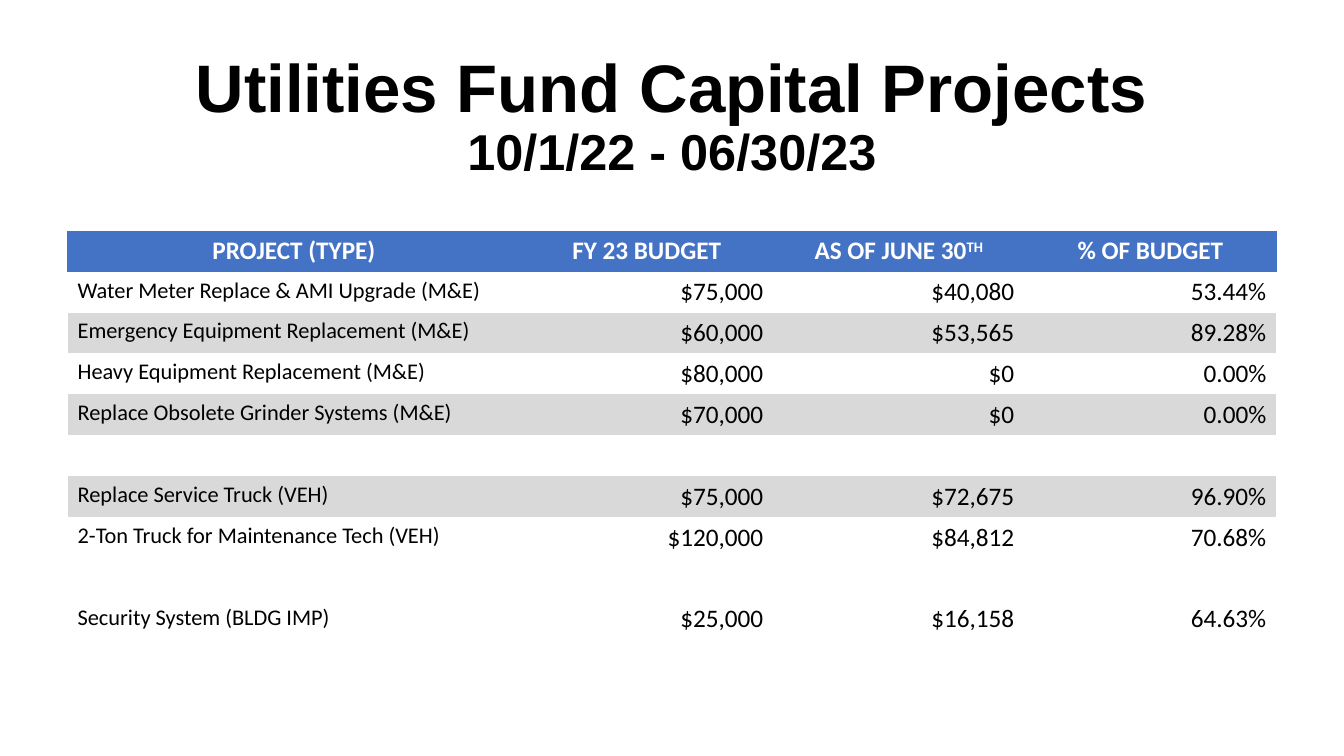
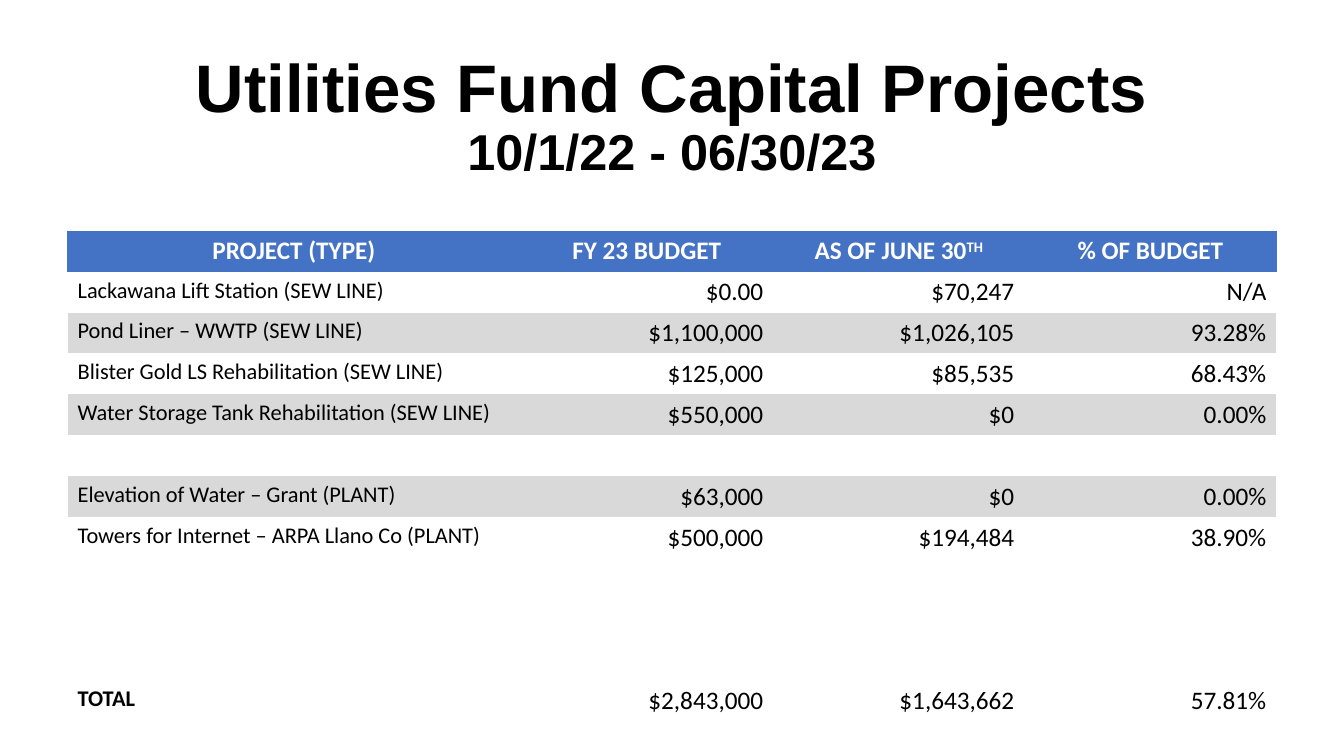
from lxml import etree
from pptx import Presentation
from pptx.dml.color import RGBColor
from pptx.enum.text import MSO_ANCHOR, PP_ALIGN
from pptx.oxml.ns import qn
from pptx.util import Inches, Pt

LEFT, CENTER, RIGHT = PP_ALIGN.LEFT, PP_ALIGN.CENTER, PP_ALIGN.RIGHT
MIDDLE = MSO_ANCHOR.MIDDLE
BLACK, WHITE, BLUE, GRAY = "000000", "FFFFFF", "4472C4", "D9D9D9"
PLAIN_TABLE_STYLE = "{2D5ABB26-0587-4C30-8999-92F81FD0307C}"
MARGIN, CONTENT_WIDTH = 0.67, 11.99
TABLE_TOP, TABLE_HEIGHT, ROW_COUNT = 2.29, 4.87, 12
COLUMN_WIDTHS = (4.49, 2.51, 2.49, 2.5)
TITLE_LINES = (("Utilities Fund Capital Projects", 48), ("10/1/22 - 06/30/23", 36))
HEADERS = ("PROJECT (TYPE)", "FY 23 BUDGET", "AS OF JUNE 30^TH", "% OF BUDGET")
BLANK_ROW = ()

EQUIPMENT_PROJECTS = (
    ("Water Meter Replace & AMI Upgrade (M&E)", "$75,000", "$40,080", "53.44%"),
    ("Emergency Equipment Replacement (M&E)", "$60,000", "$53,565", "89.28%"),
    ("Heavy Equipment Replacement (M&E)", "$80,000", "$0", "0.00%"),
    ("Replace Obsolete Grinder Systems (M&E)", "$70,000", "$0", "0.00%"),
    BLANK_ROW,
    ("Replace Service Truck (VEH)", "$75,000", "$72,675", "96.90%"),
    ("2-Ton Truck for Maintenance Tech (VEH)", "$120,000", "$84,812", "70.68%"),
    BLANK_ROW,
    ("Security System (BLDG IMP)", "$25,000", "$16,158", "64.63%"),
)
SEWER_PROJECTS = (
    ("Lackawana Lift Station (SEW LINE)", "$0.00", "$70,247", "N/A"),
    ("Pond Liner – WWTP (SEW LINE)", "$1,100,000", "$1,026,105", "93.28%"),
    ("Blister Gold LS Rehabilitation (SEW LINE)", "$125,000", "$85,535", "68.43%"),
    ("Water Storage Tank Rehabilitation (SEW LINE)", "$550,000", "$0", "0.00%"),
    BLANK_ROW,
    ("Elevation of Water – Grant (PLANT)", "$63,000", "$0", "0.00%"),
    ("Towers for Internet – ARPA Llano Co (PLANT)", "$500,000", "$194,484", "38.90%"),
    BLANK_ROW,
    BLANK_ROW,
    BLANK_ROW,
    ("TOTAL", "$2,843,000", "$1,643,662", "57.81%"),
)


def rgb(value):
    return RGBColor.from_string(value)


class ProjectDeck:
    """Hold the shared style and the current slide of the project report."""

    def __init__(self):
        self.presentation = Presentation()
        self.presentation.slide_width = Inches(13.33)
        self.presentation.slide_height = Inches(7.5)
        self.slide = None

    def add_slide(self, projects):
        self.slide = self.presentation.slides.add_slide(self.presentation.slide_layouts[6])
        self.add_title()
        self.add_project_table(projects)

    def add_run(self, paragraph, text, size, color=BLACK, bold=False, name="Calibri"):
        run = paragraph.add_run()
        run.text = text
        for attribute, value in {"size": Pt(size), "bold": bold, "name": name}.items():
            setattr(run.font, attribute, value)
        run.font.color.rgb = rgb(color)
        return run

    def add_title(self):
        shape = self.slide.shapes.add_textbox(
            Inches(MARGIN), Inches(0.26), Inches(CONTENT_WIDTH), Inches(1.82))
        frame = shape.text_frame
        frame.word_wrap = True
        frame.vertical_anchor = MIDDLE
        paragraph = frame.paragraphs[0]
        for attribute, value in {"alignment": CENTER, "line_spacing": 0.9}.items():
            setattr(paragraph, attribute, value)
        for index, (text, size) in enumerate(TITLE_LINES):
            if index:
                paragraph.add_line_break()
            self.add_run(paragraph, text, size, bold=True, name="Arial")

    def add_border(self, cell, side):
        properties = cell.fill and cell._tc.get_or_add_tcPr()
        line = etree.Element(qn(f"a:ln{side}"), w=str(Pt(0.5)))
        fill = etree.SubElement(line, qn("a:solidFill"))
        etree.SubElement(fill, qn("a:srgbClr"), val=BLUE)
        position = len(properties.findall("*")) - 1
        properties.insert(position, line)

    def add_header(self, table):
        last = len(HEADERS) - 1
        for column, header in enumerate(HEADERS):
            cell = table.cell(0, column)
            self.fill_cell(cell, BLUE)
            for side, shown in {"L": column == 0, "R": column == last, "T": True}.items():
                if shown:
                    self.add_border(cell, side)
            paragraph = cell.text_frame.paragraphs[0]
            paragraph.alignment = CENTER
            text, _, superscript = header.partition("^")
            self.add_run(paragraph, text, 18, WHITE, True)
            if superscript:
                run = self.add_run(paragraph, superscript, 18, WHITE, True)
                run.font._element.set("baseline", "30000")

    def fill_cell(self, cell, color):
        cell.fill.solid()
        cell.fill.fore_color.rgb = rgb(color)

    def add_project_row(self, table, row, values):
        for column, text in enumerate(values):
            cell = table.cell(row, column)
            if row % 2 == 0:
                self.fill_cell(cell, GRAY)
            paragraph = cell.text_frame.paragraphs[0]
            paragraph.alignment = RIGHT if column else LEFT
            self.add_run(paragraph, text, 18 if column else 16, bold=text == "TOTAL")

    def add_project_table(self, projects):
        shape = self.slide.shapes.add_table(
            ROW_COUNT, len(HEADERS), Inches(MARGIN), Inches(TABLE_TOP),
            Inches(CONTENT_WIDTH), Inches(TABLE_HEIGHT))
        table = shape.table
        next(shape.element.iter(qn("a:tableStyleId"))).text = PLAIN_TABLE_STYLE
        table.horz_banding = False
        for column, width in zip(table.columns, COLUMN_WIDTHS):
            column.width = Inches(width)
        for row in table.rows:
            row.height = Inches(TABLE_HEIGHT / ROW_COUNT)
        self.add_header(table)
        for row, values in enumerate(projects, start=1):
            self.add_project_row(table, row, values)


def main():
    deck = ProjectDeck()
    for projects in (EQUIPMENT_PROJECTS, SEWER_PROJECTS):
        deck.add_slide(projects)
    deck.presentation.save("out.pptx")


if __name__ == "__main__":
    main()
